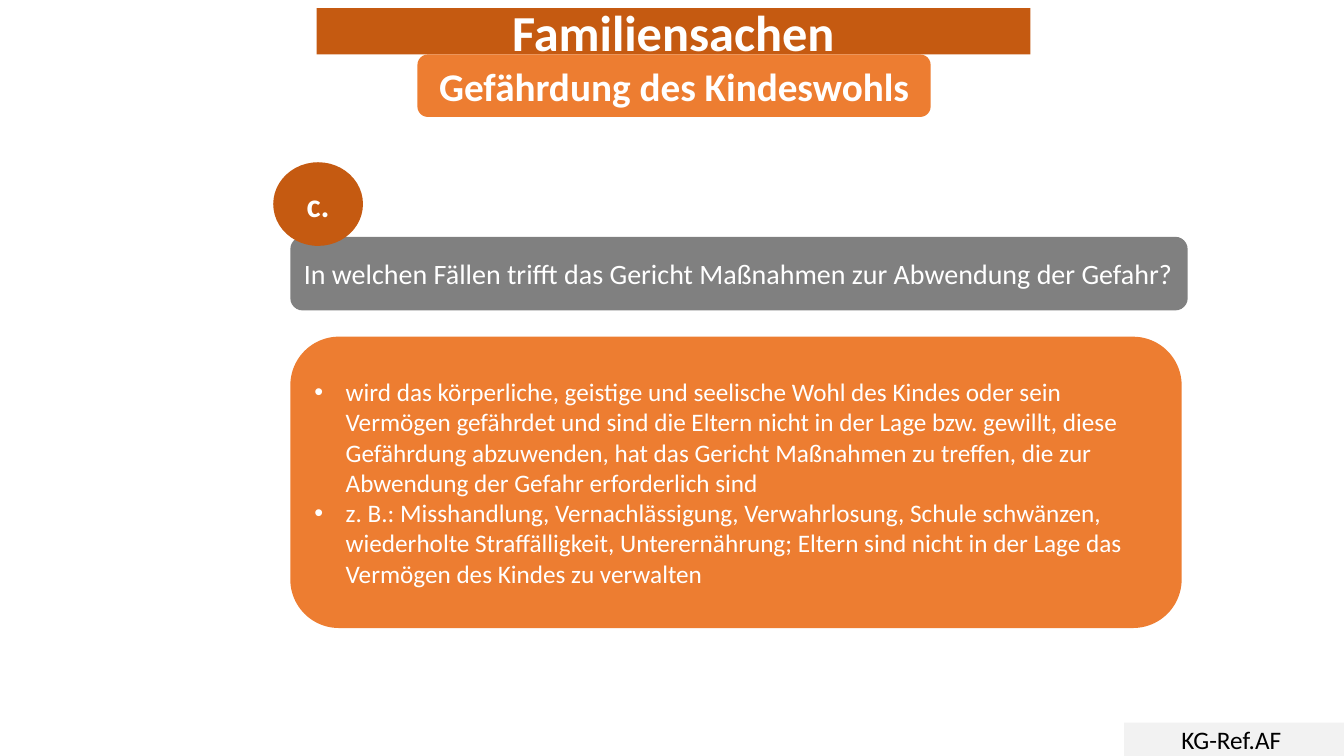
from lxml.etree import SubElement
from pptx import Presentation
from pptx.dml.color import RGBColor
from pptx.enum.shapes import MSO_SHAPE
from pptx.enum.text import MSO_ANCHOR, MSO_AUTO_SIZE, PP_ALIGN
from pptx.oxml.ns import qn
from pptx.util import Inches, Pt

DARK_ORANGE = RGBColor(0xC5, 0x5A, 0x11)
ORANGE = RGBColor(0xED, 0x7D, 0x31)
GRAY = RGBColor(0x80, 0x80, 0x80)
LIGHT_GRAY = RGBColor(0xF2, 0xF2, 0xF2)
WHITE = RGBColor(0xFF, 0xFF, 0xFF)
BLACK = RGBColor(0, 0, 0)

TITLE = "Familiensachen"
TITLE_BOX = (3.14, 0.08, 7.08, 0.46)
ROUND, RECT, CIRCLE = (MSO_SHAPE.ROUNDED_RECTANGLE, MSO_SHAPE.RECTANGLE,
                       MSO_SHAPE.FLOWCHART_CONNECTOR)
CENTER, LEFT = PP_ALIGN.CENTER, PP_ALIGN.LEFT
BULLET_INDENT = Inches(0.31)

ANSWERS = [
    "wird das körperliche, geistige und seelische Wohl des Kindes oder sein "
    "Vermögen gefährdet und sind die Eltern nicht in der Lage bzw. gewillt, diese "
    "Gefährdung abzuwenden, hat das Gericht Maßnahmen zu treffen, die zur "
    "Abwendung der Gefahr erforderlich sind",
    "z. B.: Misshandlung, Vernachlässigung, Verwahrlosung, Schule schwänzen, "
    "wiederholte Straffälligkeit, Unterernährung; Eltern sind nicht in der Lage das "
    "Vermögen des Kindes zu verwalten",
]
QUESTION = "In welchen Fällen trifft das Gericht Maßnahmen zur Abwendung der Gefahr?"

PANELS = [
    (RECT, (11.15, 7.17, 2.18, 0.33), LIGHT_GRAY, ["KG-Ref.AF "], 18, BLACK, False, CENTER, False),
    (ROUND, (2.88, 2.35, 8.9, 0.73), GRAY, [QUESTION], 20, WHITE, False, LEFT, False),
    (CIRCLE, (2.71, 1.61, 0.89, 0.83), DARK_ORANGE, ["c."], 24, WHITE, True, CENTER, False),
    (ROUND, (2.88, 3.34, 8.84, 2.89), ORANGE, ANSWERS, 18, WHITE, False, LEFT, True),
    (ROUND, (4.14, 0.54, 5.09, 0.62), ORANGE, ["Gefährdung des Kindeswohls"], 28, WHITE, True,
     CENTER, False),
]


def add_bullet(p):
    pPr = p._p.get_or_add_pPr()
    pPr.set("marL", str(BULLET_INDENT))
    pPr.set("indent", str(-BULLET_INDENT))
    SubElement(pPr, qn("a:buFont")).set("typeface", "Arial")
    SubElement(pPr, qn("a:buChar")).set("char", "•")


def format_panel(sp, fill, lines, size, color, bold, align, bulleted):
    sp.fill.solid()
    sp.fill.fore_color.rgb = fill
    sp.line.fill.background()
    tf = sp.text_frame
    tf.word_wrap = True
    tf.auto_size = MSO_AUTO_SIZE.NONE
    tf.vertical_anchor = MSO_ANCHOR.MIDDLE
    for i, line in enumerate(lines):
        p = tf.add_paragraph() if i else tf.paragraphs[0]
        p.alignment = align
        p.line_spacing = 1.0
        if bulleted:
            add_bullet(p)
        r = p.add_run()
        r.text = line
        r.font.name = "Calibri"
        r.font.size = Pt(size)
        r.font.bold = bold
        r.font.color.rgb = color


def main():
    prs = Presentation()
    prs.slide_width, prs.slide_height = Inches(13.33), Inches(7.5)
    s = prs.slides.add_slide(prs.slide_layouts[5])

    title = s.shapes.title
    title.left, title.top, title.width, title.height = map(Inches, TITLE_BOX)
    geom = SubElement(title._element.spPr, qn("a:prstGeom"), prst="roundRect")
    SubElement(geom, qn("a:avLst"))
    format_panel(title, DARK_ORANGE, [TITLE], 36, WHITE, True, CENTER, False)

    for kind, box, *style in PANELS:
        sp = s.shapes.add_shape(kind, *map(Inches, box))
        sp.shadow.inherit = False
        format_panel(sp, *style)

    prs.save("out.pptx")


if __name__ == "__main__":
    main()
